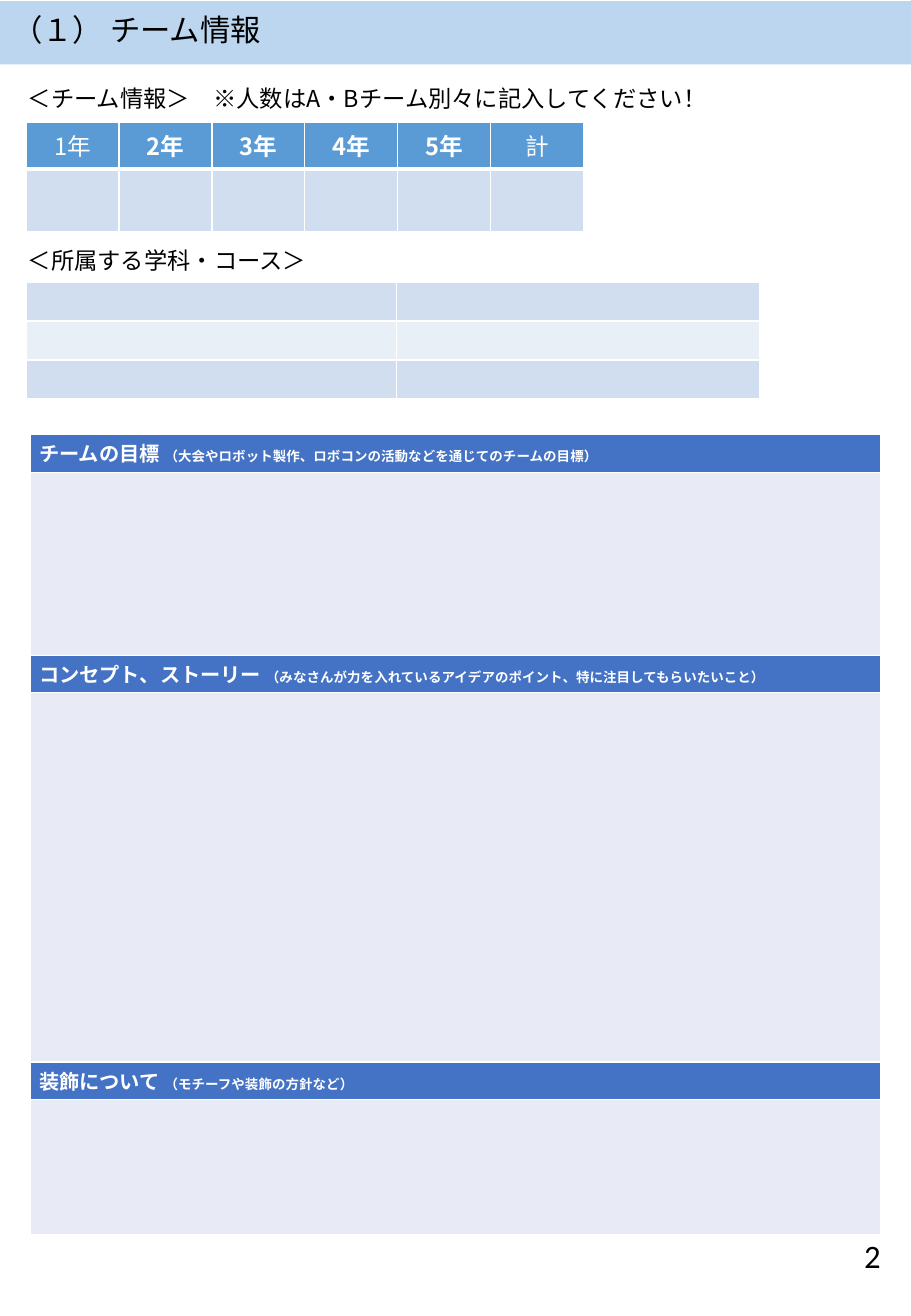
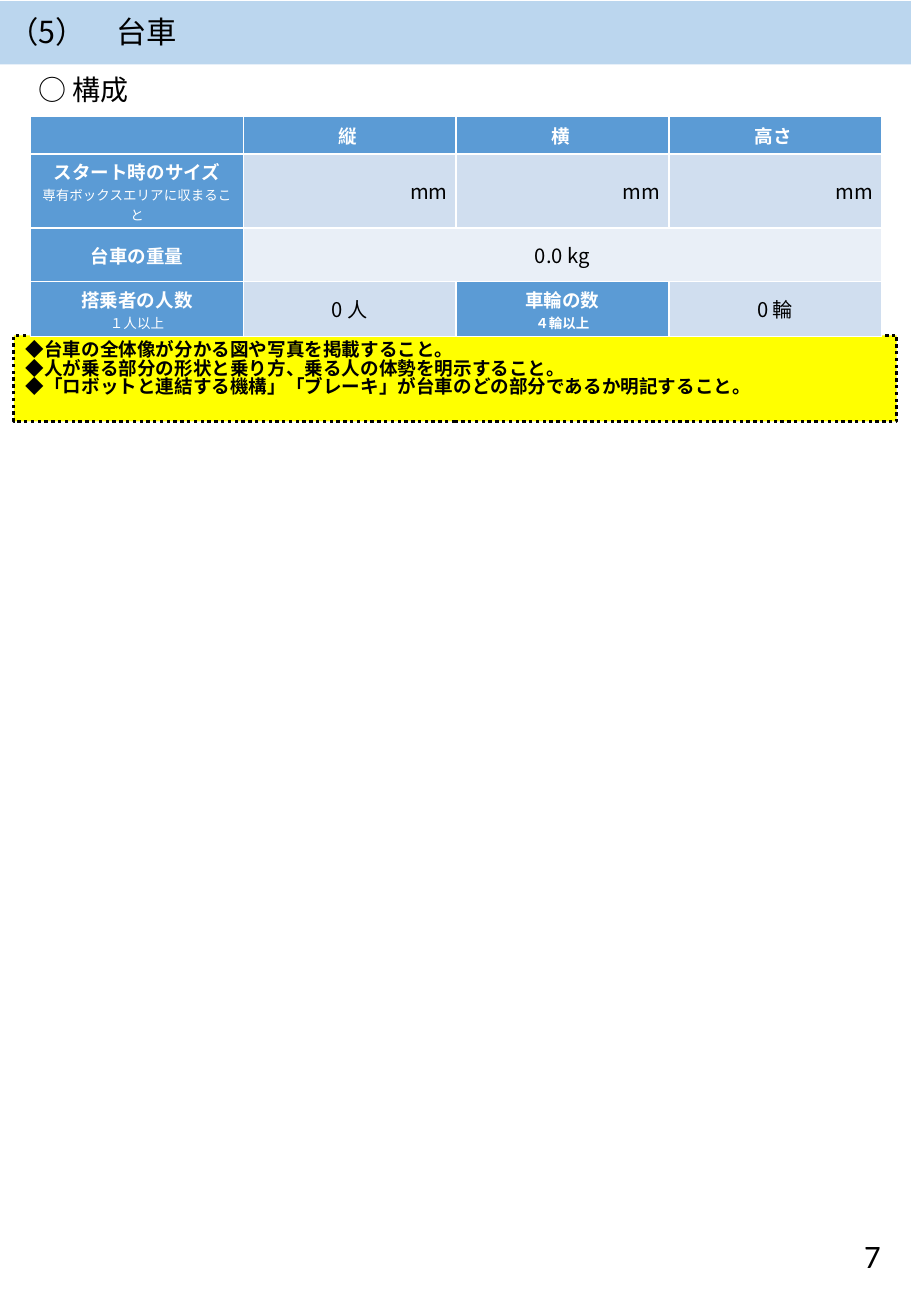
"""Build the team information and cart form slides."""
from dataclasses import dataclass
from typing import Any

from lxml.etree import SubElement as Sub
from pptx import Presentation
from pptx.dml.color import RGBColor as Rgb
from pptx.enum.dml import MSO_LINE as Dash
from pptx.enum.shapes import MSO_SHAPE as Form
from pptx.enum.text import MSO_ANCHOR as Anchor, MSO_AUTO_SIZE as Auto, PP_ALIGN as Align
from pptx.oxml.ns import qn
from pptx.util import Pt

INK = {
    "black": "000000", "white": "FFFFFF", "band": "BBD6EE", "head": "5B9BD5",
    "bar": "4472C4", "pale": "D0DEEF", "faint": "E9EFF7", "field": "E8EBF5",
    "note": "FFFF00",
}
SANS, DIGIT = "Noto Sans CJK JP", "Calibri"
WIDE, THIN = (7.2, 3.6), (5, 2.2)
Box = tuple[float, float, float, float]


@dataclass(frozen=True)
class Bit:
    """A run of text with its own size and weight."""
    text: str
    size: float
    bold: bool


@dataclass(frozen=True)
class Cell:
    """A table cell: fill, lines of text and their format."""
    fill: str
    lines: tuple = ()
    size: float = 12
    ink: str = "white"
    bold: bool = True
    align: Any = Align.CENTER
    pad: tuple[float, float] = THIN
    anchor: Any = Anchor.MIDDLE
    span: int = 1
    base: float = 1


def color(name: str) -> Rgb:
    """Return a named colour."""
    return Rgb.from_string(INK[name])


def write(frame: Any, lines: tuple, *, size: float, ink: str = "black", bold: bool = False,
          font: str = SANS, align: Any = Align.LEFT, gap: float = 1) -> None:
    """Fill a text frame with lines made of strings or bits."""
    for num, line in enumerate(lines):
        para = frame.add_paragraph() if num else frame.paragraphs[0]
        para.alignment, para.line_spacing = align, gap
        for part in (line if isinstance(line, tuple) else (line,)):
            bit = part if isinstance(part, Bit) else Bit(part, size, bold)
            run = para.add_run()
            run.text = bit.text
            run.font.size, run.font.bold, run.font.name = Pt(bit.size), bit.bold, font
            run.font.color.rgb = color(ink)
            Sub(run.font._element, qn("a:ea"), typeface=font)


def label(slide: Any, text: str, at: Box, *, title: bool = False, pad: tuple = WIDE,
          **style: Any) -> None:
    """Place a line of text, in the title placeholder if asked."""
    spot = [Pt(num) for num in at]
    if title:
        shape = slide.shapes.title
        shape.left, shape.top, shape.width, shape.height = spot
    else:
        shape = slide.shapes.add_textbox(*spot)
    frame = shape.text_frame
    frame.word_wrap, frame.auto_size = True, Auto.NONE
    frame.vertical_anchor = Anchor.MIDDLE
    frame.margin_left = frame.margin_right = Pt(pad[0])
    frame.margin_top = frame.margin_bottom = Pt(pad[1])
    write(frame, (text,), **style)


def block(slide: Any, at: Box, fill: str) -> Any:
    """Draw a plain filled rectangle."""
    shape = slide.shapes.add_shape(Form.RECTANGLE, *(Pt(num) for num in at))
    shape.shadow.inherit = False
    shape.fill.solid()
    shape.fill.fore_color.rgb = color(fill)
    shape.line.fill.background()
    return shape


def edge(cell: Any, base: float) -> None:
    """Give a cell white borders, the bottom one of a given width."""
    props = cell._tc.get_or_add_tcPr()
    for side, width in (("L", 1), ("R", 1), ("T", 1), ("B", base)):
        line = Sub(props, qn(f"a:ln{side}"), w=str(Pt(width)))
        Sub(Sub(line, qn("a:solidFill")), qn("a:srgbClr"), val=INK["white"])


def grid(slide: Any, left: float, top: float, cols: list[float], rows: list[float],
         cells: list[list[Cell]]) -> None:
    """Draw a table from rows of cells."""
    table = slide.shapes.add_table(len(rows), len(cols), Pt(left), Pt(top),
                                   Pt(sum(cols)), Pt(sum(rows))).table
    table.first_row = table.horz_banding = False
    for col, width in zip(table.columns, cols):
        col.width = Pt(width)
    for row, high in zip(table.rows, rows):
        row.height = Pt(high)
    for y, line in enumerate(cells):
        x = 0
        for item in line:
            cell = table.cell(y, x)
            if item.span > 1:
                cell.merge(table.cell(y, x + item.span - 1))
            side, rim = item.pad if item.lines else (0, 0)
            cell.margin_left = cell.margin_right = Pt(side)
            cell.margin_top = cell.margin_bottom = Pt(rim)
            cell.vertical_anchor = item.anchor
            edge(cell, item.base)
            cell.fill.solid()
            cell.fill.fore_color.rgb = color(item.fill)
            write(cell.text_frame, item.lines, size=item.size, ink=item.ink,
                  bold=item.bold, align=item.align)
            x += item.span


def page(slide: Any, num: str) -> None:
    """Write the page number."""
    label(slide, num, (407.5, 723, 121.7, 41.8), size=19.4, font=DIGIT, align=Align.RIGHT)


def team(slide: Any) -> None:
    """Fill the team information slide."""
    label(slide, "（１） チーム情報", (0, 5.8, 185, 26), title=True, size=18, gap=0.9)
    page(slide, "2")
    heads = ["1年", "2年", "3年", "4年", "5年", "計"]
    top = [Cell("head", (text,), size=14, bold=text not in (heads[0], heads[-1]),
                pad=WIDE, anchor=Anchor.TOP, base=3) for text in heads]
    grid(slide, 15.4, 72.4, [55.1] * 6, [27, 37.4], [top, [Cell("pale")] * 6])
    for text, y in (("＜チーム情報＞　※人数はA・Bチーム別々に記入してください！", 46),
                    ("＜所属する学科・コース＞", 142.5)):
        label(slide, text, (9.4, y, 445, 26), size=13.8, gap=0.9)
    grid(slide, 15.7, 167.3, [219.5, 215], [23] * 3,
         [[Cell(fill)] * 2 for fill in ("pale", "faint", "pale")])
    parts = (
        ("チームの目標 ", "（大会やロボット製作、ロボコンの活動などを通じてのチームの目標）", 108.5),
        ("コンセプト、ストーリー ",
         "（みなさんが力を入れているアイデアのポイント、特に注目してもらいたいこと）", 219),
        ("装飾について ", "（モチーフや装飾の方針など）", 80),
    )
    rows, cells = [], []
    for name, hint, high in parts:
        rows += [22.2, high]
        text = (Bit(name, 12, True), Bit(hint, 8, True))
        cells += [[Cell("bar", (text,), align=Align.LEFT, anchor=Anchor.TOP)],
                  [Cell("field")]]
    grid(slide, 18.2, 257.7, [504], rows, cells)


def cart(slide: Any) -> None:
    """Fill the cart slide."""
    label(slide, "（5）　台車", (0, 0.7, 476.6, 38), pad=THIN, size=18, gap=0.9)
    page(slide, "7")
    note = block(slide, (8.2, 198.8, 523.4, 51), "note")
    note.line.color.rgb = color("black")
    note.line.width, note.line.dash_style = Pt(2), Dash.ROUND_DOT
    frame = note.text_frame
    frame.word_wrap, frame.vertical_anchor = True, Anchor.TOP
    write(frame, ("◆台車の全体像が分かる図や写真を掲載すること。",
                  "◆人が乗る部分の形状と乗り方、乗る人の体勢を明示すること。",
                  "◆「ロボットと連結する機構」「ブレーキ」が台車のどの部分であるか明記すること。"),
          size=11, bold=True, gap=0.84)
    label(slide, "○ 構成", (18, 35, 505, 38), title=True, pad=THIN, size=16.6, gap=0.9)

    def head(text: str, hint: str = "", bold: bool = False) -> Cell:
        """Make a heading cell with an optional hint."""
        return Cell("head", (text, Bit(hint, 8, bold)) if hint else (text,), size=11)

    def value(text: str, fill: str = "pale", **style: Any) -> Cell:
        """Make a value cell."""
        return Cell(fill, (text,), ink="black", bold=False, **style)

    grid(slide, 18.2, 69.2, [126.1] * 4, [22, 44, 31.8, 32.5], [
        [Cell("head")] + [head(text) for text in ("縦 ", "横 ", "高さ ")],
        [head("スタート時のサイズ", "専有ボックスエリアに収まること")]
        + [value("mm", align=Align.RIGHT)] * 3,
        [head("台車の重量"), value("0.0 kg", "faint", span=3)],
        [head("搭乗者の人数", "１人以上"), value("0 人"),
         head("車輪の数", "４輪以上", True), value("0 輪")],
    ])


def main() -> None:
    """Build and save the deck."""
    deck = Presentation()
    deck.slide_width, deck.slide_height = Pt(540), Pt(780)
    plan = deck.slide_layouts[5]
    first, second = (deck.slides.add_slide(plan) for _ in range(2))
    band = block(first, (0, 0.7, 540, 37.5), "band")
    plan.shapes._spTree.insert(2, band._element)
    team(first)
    cart(second)
    deck.save("out.pptx")


if __name__ == "__main__":
    main()
